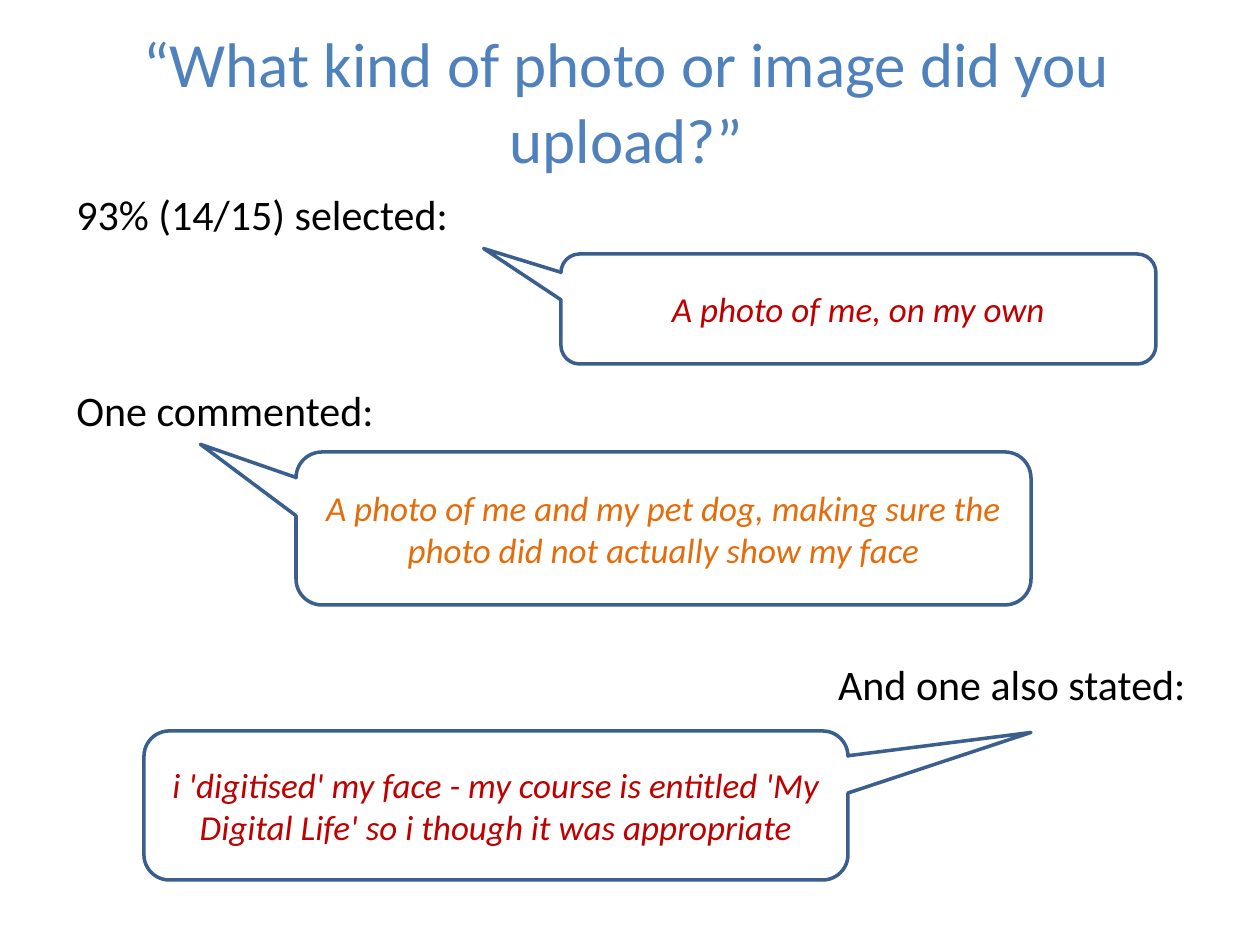
from pptx import Presentation, util as u
from pptx.dml.color import RGBColor
from pptx.enum import shapes, text

PX_PER_INCH = 126
FONT = "Calibri"
BLUE, OUTLINE, BLACK = "4F81BD", "3A5F8C", "000000"
RED, ORANGE = "C00000", "E46C0A"
LEFT, CENTER, RIGHT = text.PP_ALIGN.LEFT, text.PP_ALIGN.CENTER, text.PP_ALIGN.RIGHT
LABEL_LEFT, LABEL_WIDTH, LABEL_HEIGHT = 64, 1134, 60
TAIL_LEFT = (-0.63, -0.55, 0.17)
TAIL_RIGHT = (0.76, -0.49, 0.17)


def px(value):
    return u.Emu(round(value * 914400 / PX_PER_INCH))


def color(value):
    return RGBColor.from_string(value)


def write(shape, wording, size, fill, alignment, italic=False):
    frame = shape.text_frame
    frame.word_wrap = True
    frame.vertical_anchor = text.MSO_ANCHOR.MIDDLE
    paragraph = frame.paragraphs[0]
    paragraph.alignment = alignment
    run = paragraph.add_run()
    run.text = wording
    run.font.name = FONT
    run.font.size = u.Pt(size)
    run.font.italic = italic
    run.font.color.rgb = color(fill)


def add_text(slide, box, wording, size, fill, alignment):
    shape = slide.shapes.add_textbox(*map(px, box))
    write(shape, wording, size, fill, alignment)


def add_label(slide, top, wording, alignment=LEFT):
    box = (LABEL_LEFT, top, LABEL_WIDTH, LABEL_HEIGHT)
    add_text(slide, box, wording, 24, BLACK, alignment)


def add_quote(slide, box, tail, wording, fill):
    shape = slide.shapes.add_shape(
        shapes.MSO_SHAPE.ROUNDED_RECTANGULAR_CALLOUT, *map(px, box))
    for index, value in enumerate(tail):
        shape.adjustments[index] = value
    shape.shadow.inherit = False
    shape.fill.background()
    shape.line.color.rgb = color(OUTLINE)
    shape.line.width = u.Pt(2)
    write(shape, wording, 20, fill, CENTER, italic=True)


def main():
    presentation = Presentation()
    presentation.slide_width = px(1260)
    presentation.slide_height = px(945)
    slide = presentation.slides.add_slide(presentation.slide_layouts[6])

    add_text(slide, (15, 37, 1223, 127),
             "“What kind of photo or image did you upload?”", 36, BLUE, CENTER)

    add_label(slide, 184, "93% (14/15) selected:")
    add_label(slide, 380, "One commented:")
    add_label(slide, 654, "And one also stated:", RIGHT)

    add_quote(slide, (144, 731, 704, 149), TAIL_RIGHT,
              "i 'digitised' my face - my course is entitled 'My Digital Life' "
              "so i though it was appropriate", RED)
    add_quote(slide, (296, 452, 735, 153), TAIL_LEFT,
              "A photo of me and my pet dog, making sure the photo did not "
              "actually show my face", ORANGE)
    add_quote(slide, (561, 254, 595, 110), TAIL_LEFT,
              "A photo of me, on my own", RED)

    presentation.save("out.pptx")


if __name__ == "__main__":
    main()
